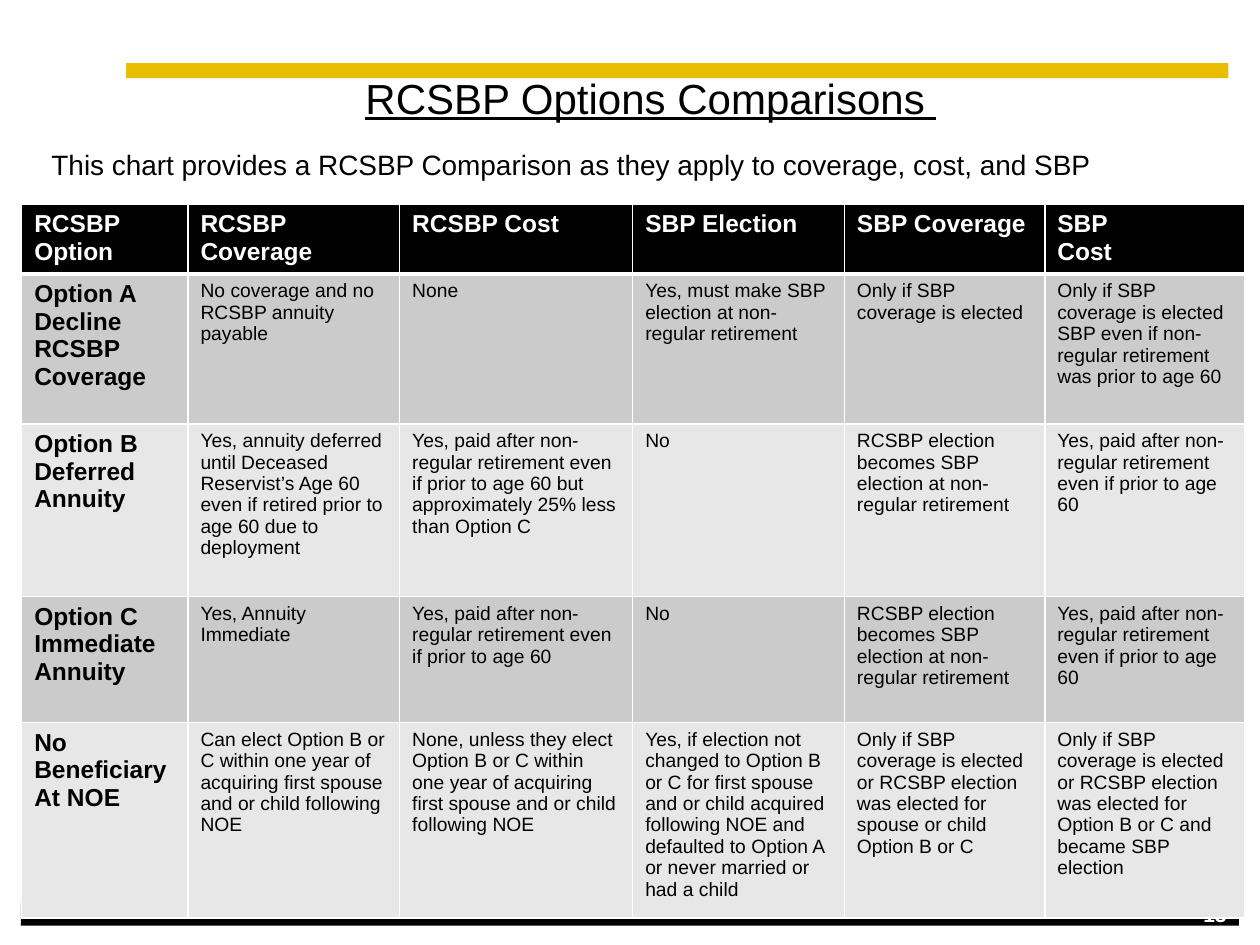
from dataclasses import dataclass

from lxml import etree
from pptx import Presentation
from pptx.dml.color import RGBColor
from pptx.enum.shapes import MSO_SHAPE
from pptx.enum.text import MSO_ANCHOR, PP_ALIGN
from pptx.oxml.ns import qn
from pptx.util import Pt

RECT = MSO_SHAPE.RECTANGLE
MIDDLE, BOTTOM = MSO_ANCHOR.MIDDLE, MSO_ANCHOR.BOTTOM
LEFT, CENTER, RIGHT = PP_ALIGN.LEFT, PP_ALIGN.CENTER, PP_ALIGN.RIGHT


@dataclass(frozen=True)
class Theme:
    font: str = "Arial"
    black: str = "000000"
    white: str = "FFFFFF"
    gold: str = "EABD00"
    bands: tuple = ("CBCBCB", "E7E7E7")
    title: float = 24
    lead: float = 16
    head: float = 14
    body: float = 11
    page: float = 12


@dataclass(frozen=True)
class Box:
    left: float
    top: float
    width: float
    height: float

    def place(self) -> tuple:
        return Pt(self.left), Pt(self.top), Pt(self.width), Pt(self.height)


@dataclass(frozen=True)
class Style:
    size: float
    color: str
    bold: bool = False
    align: PP_ALIGN = LEFT
    under: bool = False


THEME = Theme()

# Bars of the slide frame
BARS = (
    (Box(72, 36, 630, 8.64), THEME.gold),
    (Box(12, 516, 696, 13), THEME.black),
)

# Table content: a line break starts a new paragraph
COLS = (95, 121, 133.2, 121, 114.5, 114.5)
ROWS = (40, 85.7, 98.6, 72, 111.6)
LATER = "Yes, paid after non-regular retirement even if prior to age 60"
BECOMES = "RCSBP election becomes SBP election at non- regular retirement"
ELECTED = "Only if SBP coverage is elected"
CELLS = (
    ("RCSBP\nOption", "RCSBP Coverage", "RCSBP Cost",
     "SBP Election", "SBP Coverage", "SBP\nCost"),
    ("Option A\nDecline RCSBP Coverage",
     "No coverage and no RCSBP annuity payable",
     "None",
     "Yes, must make SBP election at non-regular retirement",
     ELECTED,
     ELECTED + "\nSBP even if non-regular retirement was prior to age 60"),
    ("Option B\nDeferred Annuity",
     "Yes, annuity deferred until Deceased Reservist’s Age 60 "
     "even if retired prior to age 60 due to deployment",
     LATER + " but approximately 25% less than Option C",
     "No", BECOMES, LATER),
    ("Option C\nImmediate Annuity", "Yes, Annuity Immediate",
     LATER, "No", BECOMES, LATER),
    ("No Beneficiary\nAt NOE",
     "Can elect Option B or C within one year of acquiring first spouse "
     "and or child following NOE",
     "None, unless they elect Option B or C within one year of acquiring "
     "first spouse and or child following NOE",
     "Yes, if election not changed to Option B or C for first spouse and or "
     "child acquired following NOE and defaulted to Option A or never "
     "married or had a child",
     ELECTED + " or RCSBP election was elected for spouse or child "
     "Option B or C",
     ELECTED + " or RCSBP election was elected for Option B or C and "
     "became SBP election"),
)


def write(frame, text: str, style: Style) -> None:
    frame.word_wrap = True
    frame.text = text
    for para in frame.paragraphs:
        para.alignment = style.align
        font = para.font
        font.name, font.size = THEME.font, Pt(style.size)
        font.bold, font.underline = style.bold, style.under
        font.color.rgb = RGBColor.from_string(style.color)


def add_bar(slide, box: Box, color: str) -> None:
    bar = slide.shapes.add_shape(RECT, *box.place())
    bar.shadow.inherit = False
    bar.fill.solid()
    bar.fill.fore_color.rgb = RGBColor.from_string(color)
    bar.line.fill.background()


def add_text(slide, box: Box, text: str, style: Style, anchor=None) -> None:
    frame = slide.shapes.add_textbox(*box.place()).text_frame
    write(frame, text, style)
    frame.vertical_anchor = anchor


def add_edge(cell, side: str, width: float) -> None:
    props = cell._tc.get_or_add_tcPr()
    line = etree.SubElement(props, qn(f"a:ln{side}"), w=str(Pt(width)))
    fill = etree.SubElement(line, qn("a:solidFill"))
    etree.SubElement(fill, qn("a:srgbClr"), val=THEME.white)


def paint(cell, text: str, row: int, col: int) -> None:
    head = row == 0
    label = head or col == 0
    color = THEME.white if head else THEME.black
    size = THEME.head if label else THEME.body
    write(cell.text_frame, text, Style(size, color, label))
    # Edges must come before the fill in the cell properties
    add_edge(cell, "L", 1)
    add_edge(cell, "R", 1)
    add_edge(cell, "T", 3 if row == 1 else 1)
    add_edge(cell, "B", 3 if head else 1)
    back = THEME.black if head else THEME.bands[(row - 1) % 2]
    cell.fill.solid()
    cell.fill.fore_color.rgb = RGBColor.from_string(back)


def add_grid(slide, left: float, top: float) -> None:
    box = Box(left, top, sum(COLS), sum(ROWS))
    grid = slide.shapes.add_table(len(ROWS), len(COLS), *box.place()).table
    for col, width in zip(grid.columns, COLS):
        col.width = Pt(width)
    for row, height in zip(grid.rows, ROWS):
        row.height = Pt(height)
    for r, line in enumerate(CELLS):
        for c, text in enumerate(line):
            paint(grid.cell(r, c), text, r, c)


def set_title(slide, box: Box, text: str, style: Style) -> None:
    title = slide.shapes.title
    title.left, title.top, title.width, title.height = box.place()
    frame = title.text_frame
    write(frame, text, style)
    frame.vertical_anchor = BOTTOM
    frame.margin_top = frame.margin_bottom = Pt(2)
    # Bring the title in front of the frame bars
    slide.shapes._spTree.append(title._element)


def main() -> None:
    deck = Presentation()
    deck.slide_width, deck.slide_height = Pt(720), Pt(540)
    slide = deck.slides.add_slide(deck.slide_layouts[5])

    # Frame and page number
    for box, color in BARS:
        add_bar(slide, box, color)
    add_text(slide, Box(540, 507.6, 168, 30), "13",
             Style(THEME.page, THEME.white, True, RIGHT), MIDDLE)

    # Title, table and lead line
    set_title(slide, Box(60, 36, 624, 36), "RCSBP Options Comparisons ",
              Style(THEME.title, THEME.black, align=CENTER, under=True))
    add_grid(slide, 12.4, 116.6)
    add_text(slide, Box(22.3, 80.6, 699, 26.6),
             "This chart provides a RCSBP Comparison as they apply to "
             "coverage, cost, and SBP", Style(THEME.lead, THEME.black))

    deck.save("out.pptx")


if __name__ == "__main__":
    main()
